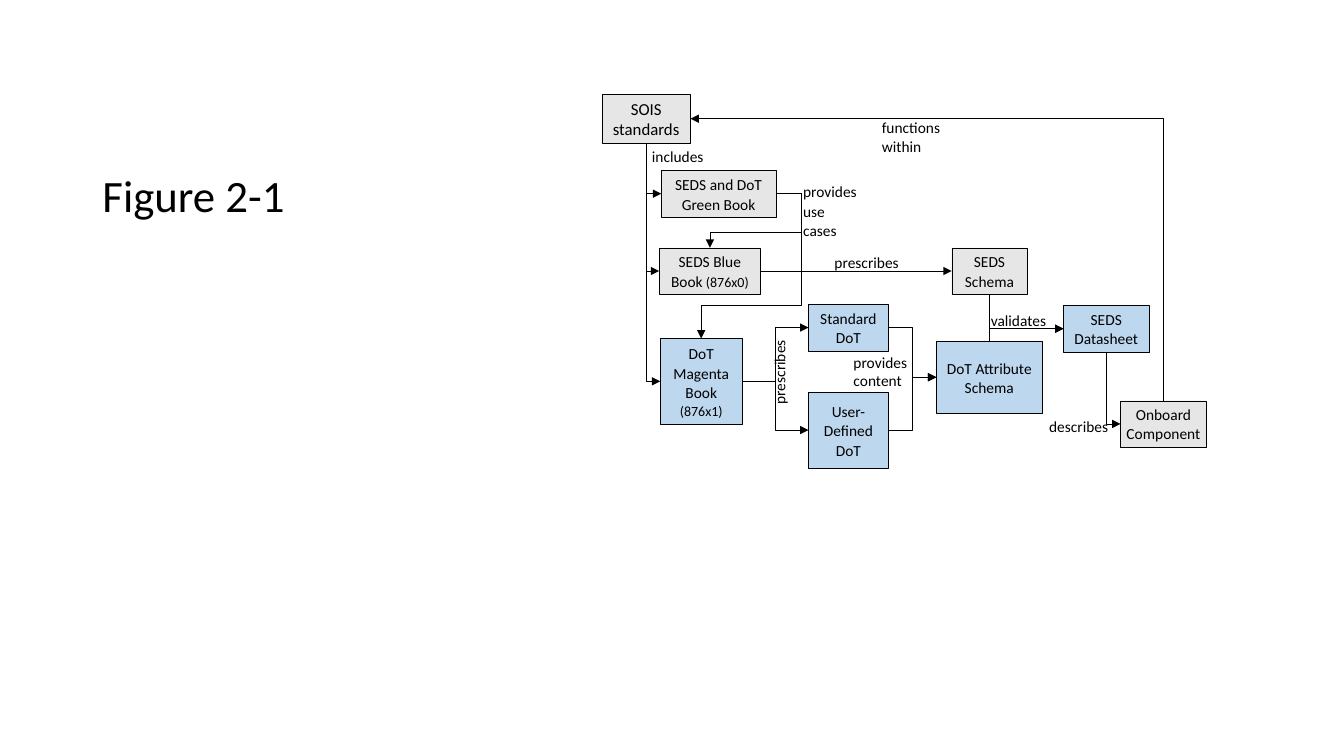
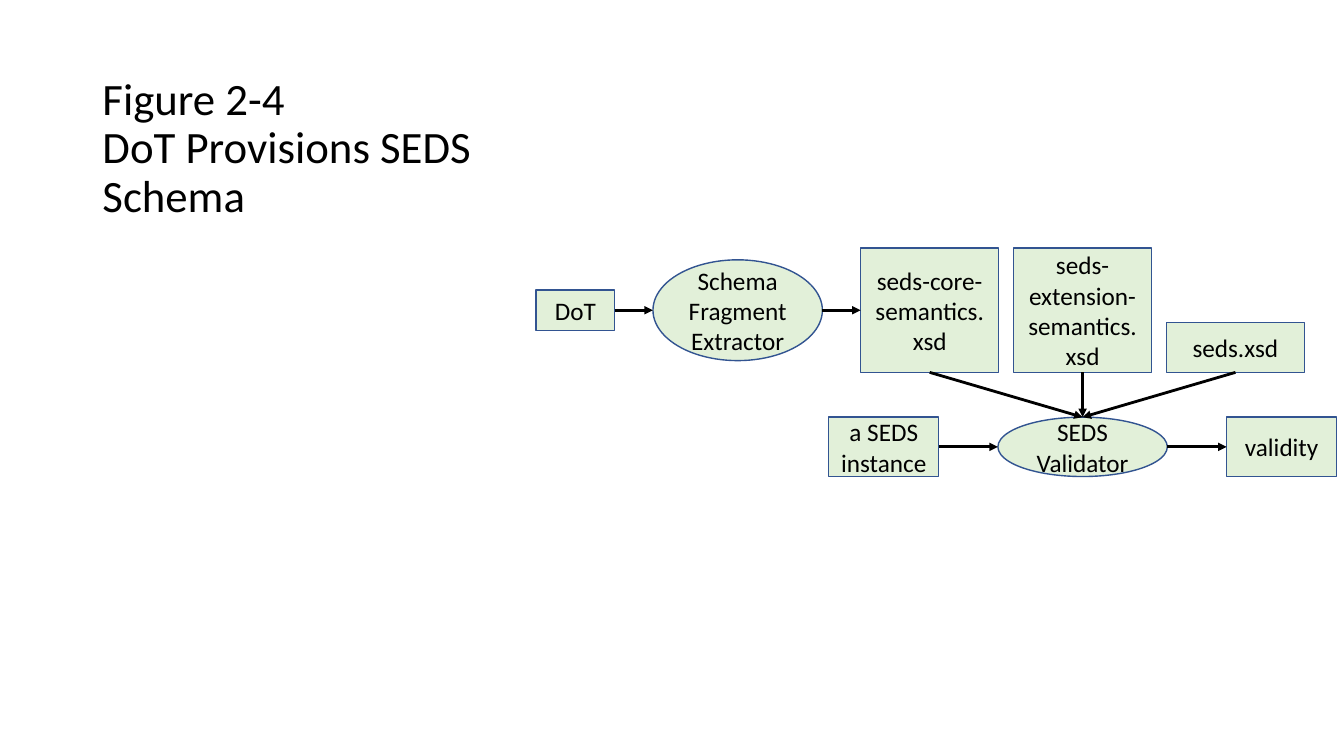
import dataclasses
import enum

import lxml.etree
import pptx
import pptx.dml.color
import pptx.enum.shapes
import pptx.enum.text
import pptx.oxml.ns
import pptx.shapes.autoshape
import pptx.shapes.connector
import pptx.slide
import pptx.text.text
import pptx.util

Pt = pptx.util.Pt
qn = pptx.oxml.ns.qn
RECTANGLE = pptx.enum.shapes.MSO_SHAPE.RECTANGLE
ELLIPSE = pptx.enum.shapes.MSO_SHAPE.OVAL
ALIGN = pptx.enum.text.PP_ALIGN
ANCHOR = pptx.enum.text.MSO_ANCHOR

FONT = "Calibri"
BLACK = "000000"
GREY = "E7E6E6"
BLUE = "BDD7EE"
GREEN = "E2F0D9"
NAVY = "325491"
TITLE_FRAME = (66, 36, 309.6, 126)


class Side(enum.IntEnum):
    TOP = 0
    LEFT = 1
    BOTTOM = 2
    RIGHT = 3


class Route(enum.Enum):
    STRAIGHT = "line"
    CORNER = "bentConnector2"
    STEP = "bentConnector3"
    DETOUR = "bentConnector4"


@dataclasses.dataclass(frozen=True)
class Run:
    text: str
    size: float = 11


@dataclasses.dataclass(frozen=True)
class Box:
    left: float
    top: float
    width: float
    height: float
    runs: tuple[Run, ...]
    fill: str = GREEN
    line: str = NAVY
    line_width: float = 1
    kind: pptx.enum.shapes.MSO_SHAPE = RECTANGLE
    line_spacing: float = 1
    space_after: float = 0
    side_inset: float = 7.2


@dataclasses.dataclass(frozen=True)
class Arrow:
    start: str
    start_side: Side
    end: str
    end_side: Side
    route: Route = Route.STRAIGHT
    adjustments: tuple[float, ...] = ()


@dataclasses.dataclass(frozen=True)
class Label:
    left: float
    top: float
    width: float
    height: float
    lines: tuple[str, ...]
    line_spacing: float = 1.05
    vertical: bool = False


def book_box(left: float, top: float, width: float, height: float, fill: str, *runs: Run,
             line_spacing: float = 1.05, space_after: float = 0, side_inset: float = 7.2) -> Box:
    return Box(left, top, width, height, runs, fill, BLACK, 0.25,
               line_spacing=line_spacing, space_after=space_after, side_inset=side_inset)


def flow_box(left: float, top: float, width: float, height: float, text: str,
             kind: pptx.enum.shapes.MSO_SHAPE = RECTANGLE) -> Box:
    return Box(left, top, width, height, (Run(text, 18),), kind=kind)


BOOK_HEIGHT = 33.2
BOOK_BOXES = {
    "schema": book_box(679.8, 177, 54, BOOK_HEIGHT, GREY, Run("SEDS Schema"), space_after=8),
    "datasheet": book_box(759.6, 218.2, 61.2, BOOK_HEIGHT, BLUE, Run("SEDS Datasheet"),
                          line_spacing=1),
    "standard": book_box(577.6, 217.4, 56.9, BOOK_HEIGHT, BLUE, Run("Standard DoT")),
    "user": book_box(577.6, 280.2, 56.9, 54, BLUE, Run("User-Defined DoT")),
    "blue": book_box(470.9, 177, 72.4, BOOK_HEIGHT, GREY,
                     Run("SEDS Blue Book"), Run(" (876x0)", 10), space_after=8),
    "magenta": book_box(471.6, 241.8, 58.6, 61.2, BLUE,
                        Run("DoT Magenta Book"), Run(" (876x1)", 10), space_after=8),
    "standards": book_box(430, 67.2, 63.2, 35.2, GREY, Run("SOIS standards", 12),
                          line_spacing=1),
    "attribute": book_box(668.8, 243.6, 75.8, 51.8, BLUE, Run("DoT Attribute Schema"),
                          space_after=8),
    "green": book_box(472.3, 121.8, 82.1, BOOK_HEIGHT, GREY, Run("SEDS and DoT Green Book"),
                      space_after=8),
    "component": book_box(800.4, 286.2, 61.4, BOOK_HEIGHT, GREY, Run("Onboard Component"),
                          line_spacing=1, side_inset=0),
}
BOOK_ARROWS = [
    *(Arrow("standards", Side.BOTTOM, book, Side.LEFT, Route.CORNER)
      for book in ("green", "blue", "magenta")),
    *(Arrow("magenta", Side.RIGHT, dictionary, Side.LEFT, Route.STEP)
      for dictionary in ("standard", "user")),
    Arrow("blue", Side.RIGHT, "schema", Side.LEFT),
    Arrow("schema", Side.BOTTOM, "datasheet", Side.LEFT, Route.CORNER),
    Arrow("attribute", Side.TOP, "datasheet", Side.LEFT, Route.CORNER),
    Arrow("datasheet", Side.BOTTOM, "component", Side.LEFT, Route.CORNER),
    Arrow("component", Side.TOP, "standards", Side.RIGHT, Route.CORNER),
    *(Arrow(dictionary, Side.RIGHT, "attribute", Side.LEFT, Route.STEP)
      for dictionary in ("user", "standard")),
    Arrow("green", Side.RIGHT, "blue", Side.TOP, Route.DETOUR, (-0.38, 0.71)),
    Arrow("green", Side.RIGHT, "magenta", Side.TOP, Route.DETOUR, (-0.34, 0.77)),
]
BOOK_LABELS = [
    Label(458.6, 100.8, 60.5, 25.2, ("includes",), 1.07),
    Label(622.8, 80, 86.4, 25.2, ("functions within",), 1.06),
    Label(589, 176.4, 60.5, 25.2, ("prescribes",), 1.06),
    Label(545.8, 261.4, 60.5, 34.6, ("prescribes",), vertical=True),
    Label(602.6, 248.4, 52.6, 38.2, ("provides", "content"), 1),
    Label(700.6, 218.2, 54, 25.2, ("validates",)),
    Label(742.3, 293.8, 56.9, 25.2, ("describes",)),
    Label(566.6, 126, 56.2, 36.7, ("provides", "use cases")),
]

SEMANTICS_LEFT = 614.8
SEMANTICS_STEP = 109.2
SEMANTICS_WIDTH = 98.6
VALIDATOR_TOP = 298
VALIDATOR_HEIGHT = 42.4
FLOW_BOXES = {
    "dictionary": flow_box(383, 207.2, 56, 28.8, "DoT"),
    "core": flow_box(SEMANTICS_LEFT, 177.2, SEMANTICS_WIDTH, 88.8, "seds-core-semantics.xsd"),
    "extension": flow_box(SEMANTICS_LEFT + SEMANTICS_STEP, 177.2, SEMANTICS_WIDTH, 88.8,
                          "seds-extension-semantics.xsd"),
    "seds": flow_box(SEMANTICS_LEFT + 2 * SEMANTICS_STEP, 230.4, SEMANTICS_WIDTH, 35.6,
                     "seds.xsd"),
    "extractor": flow_box(466.4, 185.6, 121, 72, "Schema Fragment Extractor", ELLIPSE),
    "instance": flow_box(592, VALIDATOR_TOP, 78.6, VALIDATOR_HEIGHT, "a SEDS instance"),
    "validator": flow_box(712.8, VALIDATOR_TOP, 121, VALIDATOR_HEIGHT, "SEDS Validator", ELLIPSE),
    "validity": flow_box(876.2, VALIDATOR_TOP, 78.6, VALIDATOR_HEIGHT, "validity"),
}
FLOW_ARROWS = [
    *(Arrow(start, Side.RIGHT, end, Side.LEFT) for start, end in (
        ("dictionary", "extractor"), ("extractor", "core"),
        ("instance", "validator"), ("validator", "validity"))),
    *(Arrow(file, Side.BOTTOM, "validator", Side.TOP) for file in ("seds", "extension", "core")),
]


def color(value: str) -> pptx.dml.color.RGBColor:
    return pptx.dml.color.RGBColor.from_string(value)


def add_run(paragraph: pptx.text.text._Paragraph, text: str, size: float) -> None:
    run = paragraph.add_run()
    run.text = text
    run.font.name = FONT
    run.font.size = Pt(size)
    run.font.color.rgb = color(BLACK)


def set_title(slide: pptx.slide.Slide, lines: tuple[str, ...]) -> None:
    title = slide.shapes.title
    title.left, title.top, title.width, title.height = map(Pt, TITLE_FRAME)
    frame = title.text_frame
    frame.vertical_anchor = ANCHOR.BOTTOM
    frame.auto_size = pptx.enum.text.MSO_AUTO_SIZE.NONE
    paragraph = frame.paragraphs[0]
    paragraph.alignment = ALIGN.LEFT
    paragraph.line_spacing = 0.9
    for index, line in enumerate(lines):
        if index:
            paragraph.add_line_break()
        add_run(paragraph, line, 32)


def add_box(slide: pptx.slide.Slide, box: Box) -> pptx.shapes.autoshape.Shape:
    shape = slide.shapes.add_shape(
        box.kind, Pt(box.left), Pt(box.top), Pt(box.width), Pt(box.height))
    shape.shadow.inherit = False
    shape.fill.solid()
    shape.fill.fore_color.rgb = color(box.fill)
    shape.line.color.rgb = color(box.line)
    shape.line.width = Pt(box.line_width)
    frame = shape.text_frame
    frame.word_wrap = True
    frame.vertical_anchor = ANCHOR.MIDDLE
    frame.margin_left = frame.margin_right = Pt(box.side_inset)
    paragraph = frame.paragraphs[0]
    paragraph.alignment = ALIGN.CENTER
    paragraph.line_spacing = box.line_spacing
    paragraph.space_after = Pt(box.space_after)
    for run in box.runs:
        add_run(paragraph, run.text, run.size)
    return shape


def side_middle(shape: pptx.shapes.autoshape.Shape, side: Side) -> tuple[int, int]:
    center_x = shape.left + shape.width // 2
    center_y = shape.top + shape.height // 2
    return {
        Side.TOP: (center_x, shape.top),
        Side.LEFT: (shape.left, center_y),
        Side.BOTTOM: (center_x, shape.top + shape.height),
        Side.RIGHT: (shape.left + shape.width, center_y),
    }[side]


def can_join(shape: pptx.shapes.autoshape.Shape, side: Side) -> bool:
    return shape.auto_shape_type == RECTANGLE or side == Side.TOP


def turn_corner(connector: pptx.shapes.connector.Connector) -> None:
    across = connector.end_x - connector.begin_x
    down = connector.end_y - connector.begin_y
    center_x = (connector.begin_x + connector.end_x) // 2
    center_y = (connector.begin_y + connector.end_y) // 2
    connector.width, connector.height = abs(down), abs(across)
    connector.left = center_x - abs(down) // 2
    connector.top = center_y - abs(across) // 2
    transform = connector._element.spPr.find(qn("a:xfrm"))
    transform.set("rot", "16200000")
    transform.set("flipH", str(int(down > 0)))
    transform.set("flipV", str(int(across < 0)))


def add_arrow(slide: pptx.slide.Slide, shapes: dict[str, pptx.shapes.autoshape.Shape],
              arrow: Arrow, width: float) -> None:
    start, end = shapes[arrow.start], shapes[arrow.end]
    kinds = pptx.enum.shapes.MSO_CONNECTOR
    kind = kinds.STRAIGHT if arrow.route is Route.STRAIGHT else kinds.ELBOW
    connector = slide.shapes.add_connector(
        kind, *side_middle(start, arrow.start_side), *side_middle(end, arrow.end_side))
    if can_join(start, arrow.start_side):
        connector.begin_connect(start, int(arrow.start_side))
    if can_join(end, arrow.end_side):
        connector.end_connect(end, int(arrow.end_side))
    properties = connector._element.spPr
    geometry = properties.find(qn("a:prstGeom"))
    geometry.set("prst", arrow.route.value)
    for number, share in enumerate(arrow.adjustments, 1):
        lxml.etree.SubElement(geometry.find(qn("a:avLst")), qn("a:gd"),
                              name=f"adj{number}", fmla=f"val {round(share * 100000)}")
    if arrow.route is Route.CORNER:
        turn_corner(connector)
    connector.line.color.rgb = color(BLACK)
    connector.line.width = Pt(width)
    lxml.etree.SubElement(properties.find(qn("a:ln")), qn("a:tailEnd"), type="triangle")
    lxml.etree.SubElement(properties, qn("a:effectLst"))


def add_label(slide: pptx.slide.Slide, label: Label) -> None:
    shape = slide.shapes.add_textbox(
        Pt(label.left), Pt(label.top), Pt(label.width), Pt(label.height))
    frame = shape.text_frame
    frame.word_wrap = False
    if label.vertical:
        frame._txBody.bodyPr.set("vert", "vert270")
    for index, line in enumerate(label.lines):
        paragraph = frame.add_paragraph() if index else frame.paragraphs[0]
        paragraph.line_spacing = label.line_spacing
        add_run(paragraph, line, 11)


def add_diagram(presentation: pptx.presentation.Presentation, title: tuple[str, ...],
                boxes: dict[str, Box], arrows: list[Arrow], arrow_width: float,
                labels: list[Label]) -> None:
    slide = presentation.slides.add_slide(
        presentation.slide_layouts.get_by_name("Title Only"))
    set_title(slide, title)
    shapes = {name: add_box(slide, box) for name, box in boxes.items()}
    for arrow in arrows:
        add_arrow(slide, shapes, arrow, arrow_width)
    for label in labels:
        add_label(slide, label)


def main() -> None:
    presentation = pptx.Presentation()
    presentation.slide_width = Pt(960)
    presentation.slide_height = Pt(540)
    add_diagram(presentation, ("Figure 2-1",), BOOK_BOXES, BOOK_ARROWS, 0.5, BOOK_LABELS)
    add_diagram(presentation, ("Figure 2-4", "DoT Provisions SEDS Schema"),
                FLOW_BOXES, FLOW_ARROWS, 2, [])
    presentation.save("out.pptx")


if __name__ == "__main__":
    main()
